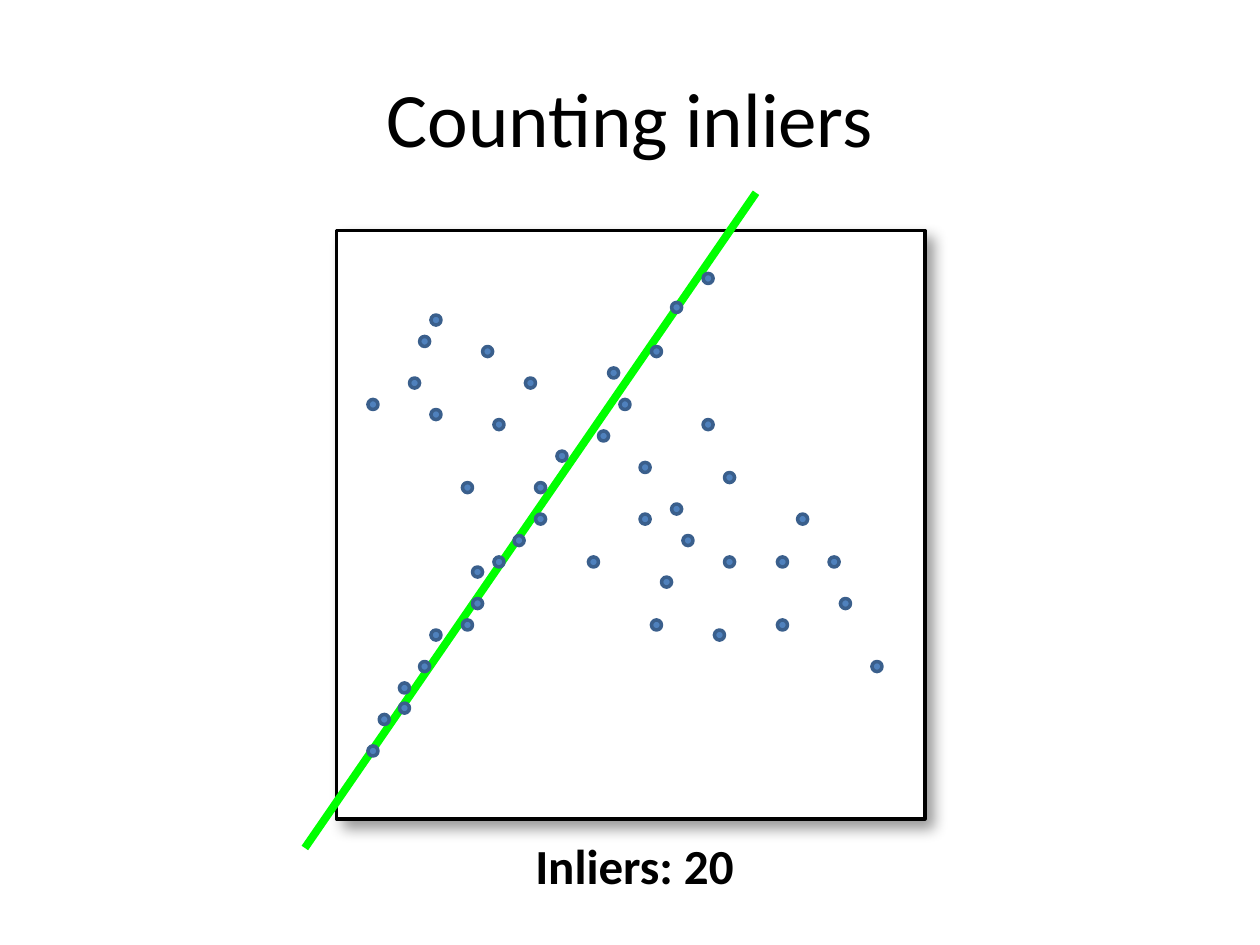
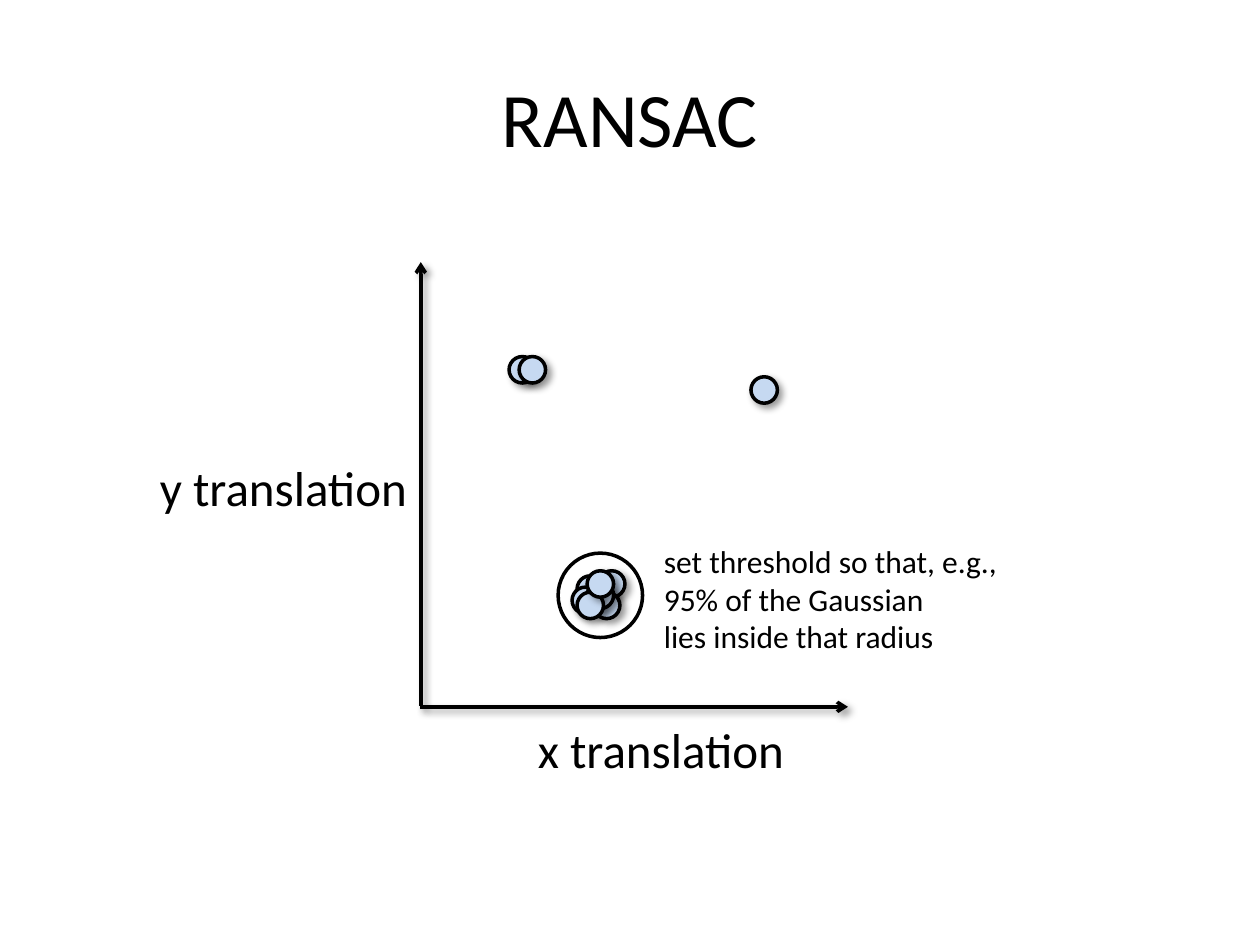
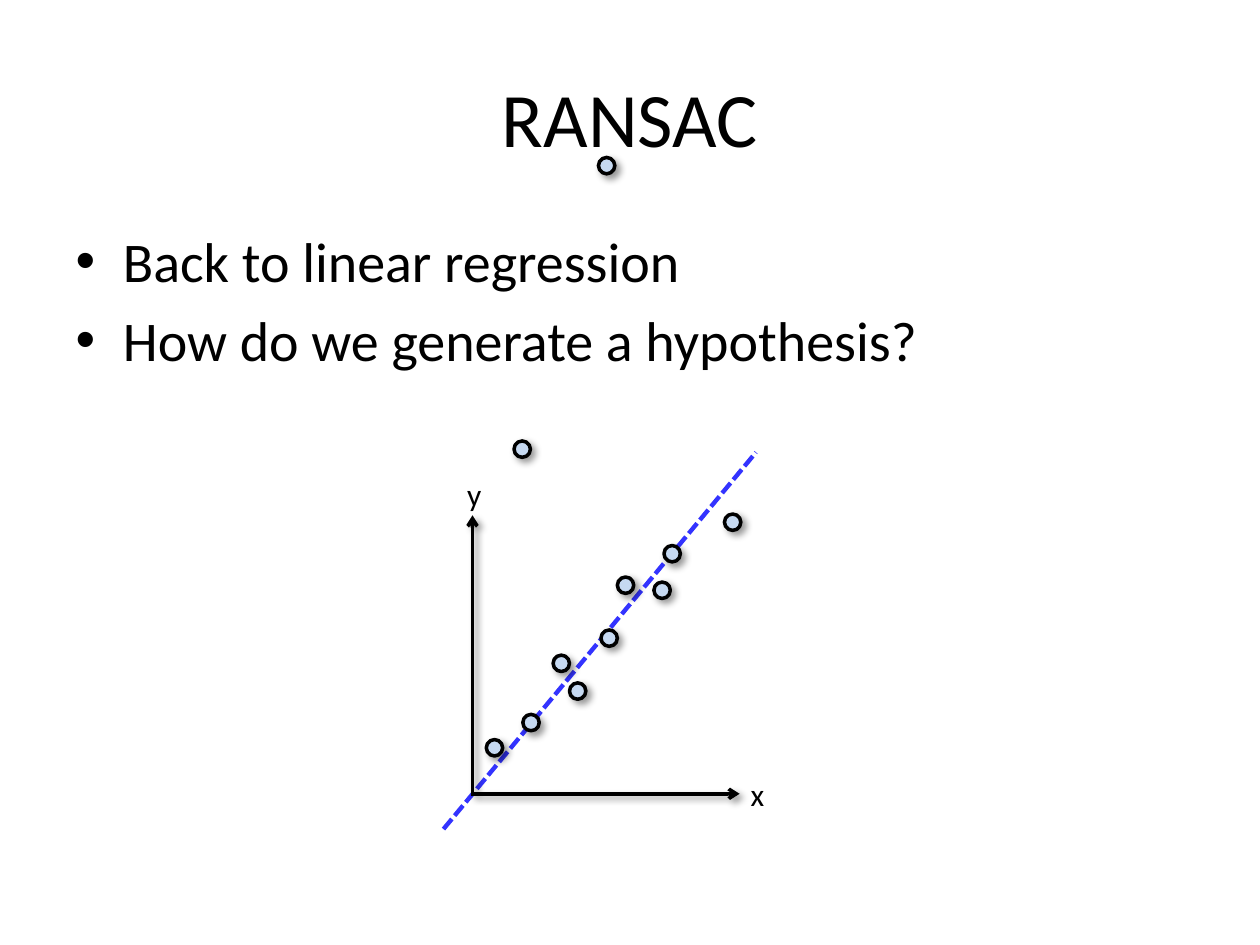
from lxml import etree
from pptx import Presentation
from pptx.dml.color import RGBColor
from pptx.enum.dml import MSO_LINE
from pptx.enum.shapes import MSO_CONNECTOR, MSO_SHAPE
from pptx.enum.text import MSO_ANCHOR, MSO_AUTO_SIZE, PP_ALIGN
from pptx.oxml.ns import qn
from pptx.util import Emu, Pt

SCALE = 9144
FONT = "Calibri"
BLACK = RGBColor(0x00, 0x00, 0x00)
WHITE = RGBColor(0xFF, 0xFF, 0xFF)
GREEN = RGBColor(0x00, 0xFF, 0x00)
BLUE = RGBColor(0x33, 0x33, 0xFF)
STEEL = RGBColor(0x4F, 0x81, 0xBD)
NAVY = RGBColor(0x3A, 0x5F, 0x8C)
PALE = RGBColor(0xC6, 0xD9, 0xF1)

RECT, OVAL = MSO_SHAPE.RECTANGLE, MSO_SHAPE.OVAL
STRAIGHT = MSO_CONNECTOR.STRAIGHT
DASH = MSO_LINE.SQUARE_DOT
CENTER, MIDDLE = PP_ALIGN.CENTER, MSO_ANCHOR.MIDDLE
GROW = MSO_AUTO_SIZE.SHAPE_TO_FIT_TEXT
BODY_LAYOUT, TITLE_LAYOUT = 1, 5
SOFT, DEEP = (4, 3), (8, 6)

INLIERS = [
    (108, 292), (125, 259), (75, 317), (100, 309), (66, 342),
    (50, 359), (34, 384), (25, 409), (50, 375), (108, 267),
    (141, 242), (158, 225), (158, 200), (175, 175), (208, 159),
    (225, 134), (216, 109), (250, 92), (266, 57), (291, 34),
]
OUTLIERS = [
    (308, 259), (258, 275), (241, 225), (275, 242), (266, 217),
    (308, 192), (291, 150), (241, 184), (200, 259), (250, 309),
    (300, 317), (350, 309), (400, 292), (391, 259), (350, 259),
    (366, 225), (425, 342), (150, 117), (125, 150), (75, 142),
    (100, 200), (116, 92), (66, 84), (25, 134), (58, 117), (75, 67),
]
SHIFTS = [
    (125, 249), (142, 245), (121, 258), (71, 75), (79, 75),
    (138, 262), (133, 254), (125, 262), (133, 245), (263, 91),
]
SAMPLES = [
    (65, 111), (103, 91), (116, 49), (153, 24), (201, -1), (41, 158),
    (12, 178), (78, 133), (145, 53), (34, -59), (101, -284),
]


def px(*vals):
    """Turn px lengths into EMU."""
    return [Emu(v * SCALE) for v in vals]


def place(shape, *box):
    """Move and size a shape."""
    shape.left, shape.top, shape.width, shape.height = px(*box)


def shade(shape, cast=None):
    """Give a shape a soft shadow of (blur, distance) points, or none."""
    effects = etree.SubElement(shape._element.spPr, qn("a:effectLst"))
    if cast:
        blur, dist = cast
        outer = etree.SubElement(
            effects, qn("a:outerShdw"), blurRad=str(Pt(blur)),
            dist=str(Pt(dist)), dir="2700000", algn="tl", rotWithShape="0")
        tint = etree.SubElement(outer, qn("a:srgbClr"), val=str(BLACK))
        etree.SubElement(tint, qn("a:alpha"), val="40000")


def draw(slide, kind, box, fill=None, edge=BLACK, cast=None):
    """Add a filled or hollow preset shape."""
    shape = slide.shapes.add_shape(kind, *px(*box))
    if fill is None:
        shape.fill.background()
    else:
        shape.fill.solid()
        shape.fill.fore_color.rgb = fill
    shape.line.color.rgb = edge
    shape.line.width = Pt(2)
    shade(shape, cast)


def rule(slide, start, end, color, width, dash=None, arrow=False, cast=None):
    """Add a straight line, with an arrowhead at its end if asked."""
    link = slide.shapes.add_connector(STRAIGHT, *px(*start, *end))
    link.line.color.rgb = color
    link.line.width = Pt(width)
    if dash:
        link.line.dash_style = dash
    if arrow:
        etree.SubElement(link.line._ln, qn("a:tailEnd"), type="arrow")
    shade(link, cast)


def write(frame, lines, size, bold=False, align=None):
    """Fill a text frame, one paragraph for each line."""
    for num, line in enumerate(lines):
        para = frame.add_paragraph() if num else frame.paragraphs[0]
        if align is not None:
            para.alignment = align
        run = para.add_run()
        run.text = line
        run.font.name = FONT
        run.font.size = Pt(size)
        run.font.bold = bold
        run.font.color.rgb = BLACK


def label(slide, box, lines, size, bold=False, wrap=False):
    """Add a text box that grows with its text."""
    frame = slide.shapes.add_textbox(*px(*box)).text_frame
    frame.word_wrap = wrap
    frame.auto_size = GROW
    write(frame, lines, size, bold)


def begin(deck, title, layout=TITLE_LAYOUT):
    """Add a slide with the shared title."""
    slide = deck.slides.add_slide(deck.slide_layouts[layout])
    head = slide.shapes.title
    place(head, 50, 30, 900, 125)
    head.text_frame.vertical_anchor = MIDDLE
    write(head.text_frame, [title], 44, align=CENTER)
    return slide


def dots(slide, x, y, points, size, fill, edge=BLACK, cast=None):
    """Scatter round marks from a corner."""
    for dx, dy in points:
        draw(slide, OVAL, (x + dx, y + dy, size, size), fill, edge, cast)


def axes(slide, x, y, w, h):
    """Draw two arrows that meet at the lower left of a box."""
    base = y + h
    for start, end in (((x + 1, base - 1), (x + 1, y)),
                       ((x, base), (x + w, base))):
        rule(slide, start, end, BLACK, 2, arrow=True, cast=SOFT)


def count(slide, x, y, side):
    """Draw the framed points, the fitted line and its score."""
    draw(slide, RECT, (x, y, side, side), WHITE, cast=DEEP)
    rule(slide, (x - 25, y + 490), (x + 333, y - 30), GREEN, 4.5)
    dots(slide, x, y, INLIERS + OUTLIERS, 8, STEEL, NAVY)
    label(slide, (x + 148, y + side + 8, 180, 57),
          [f"Inliers: {len(INLIERS)}"], 28, bold=True)


def votes(slide, x, y, w, h):
    """Draw the translation votes and the radius around their cluster."""
    axes(slide, x, y, w, h)
    label(slide, (x + 84, y + h + 5, 218, 57), ["x translation"], 28)
    label(slide, (x - 216, y + 150, 219, 57), ["y translation"], 28)
    dots(slide, x, y, SHIFTS, 21, PALE, cast=SOFT)
    draw(slide, OVAL, (x + 110, y + 231, 67, 67))
    label(slide, (x + 184, y + 217, 308, 101),
          ["set threshold so that, e.g., 95% of the Gaussian",
           "lies inside that radius"], 18, wrap=True)


def fit(slide, x, y, w, h):
    """Draw the sample points with a dashed regression line."""
    rule(slide, (x - 22, y + 249), (x + 226, y - 50), BLUE, 2.5, DASH)
    axes(slide, x, y, w, h)
    label(slide, (x + w - 1, y + h - 20, 31, 40), ["x"], 18)
    label(slide, (x - 13, y - 37, 32, 40), ["y"], 18)
    dots(slide, x, y, SAMPLES, 13, PALE, cast=SOFT)


def points(slide, *box):
    """Fill the bulleted body."""
    body = slide.placeholders[1]
    place(body, *box)
    write(body.text_frame, ["Back to linear regression",
                            "How do we generate a hypothesis?"], 32)


def main():
    """Build the three slides."""
    deck = Presentation()
    deck.slide_width, deck.slide_height = px(1000, 750)
    count(begin(deck, "Counting inliers"), 267, 183, 467)
    votes(begin(deck, "RANSAC"), 333, 208, 340, 353)
    last = begin(deck, "RANSAC", BODY_LAYOUT)
    fit(last, 374, 409, 213, 221)
    points(last, 50, 175, 900, 193)
    deck.save("out.pptx")


if __name__ == "__main__":
    main()
